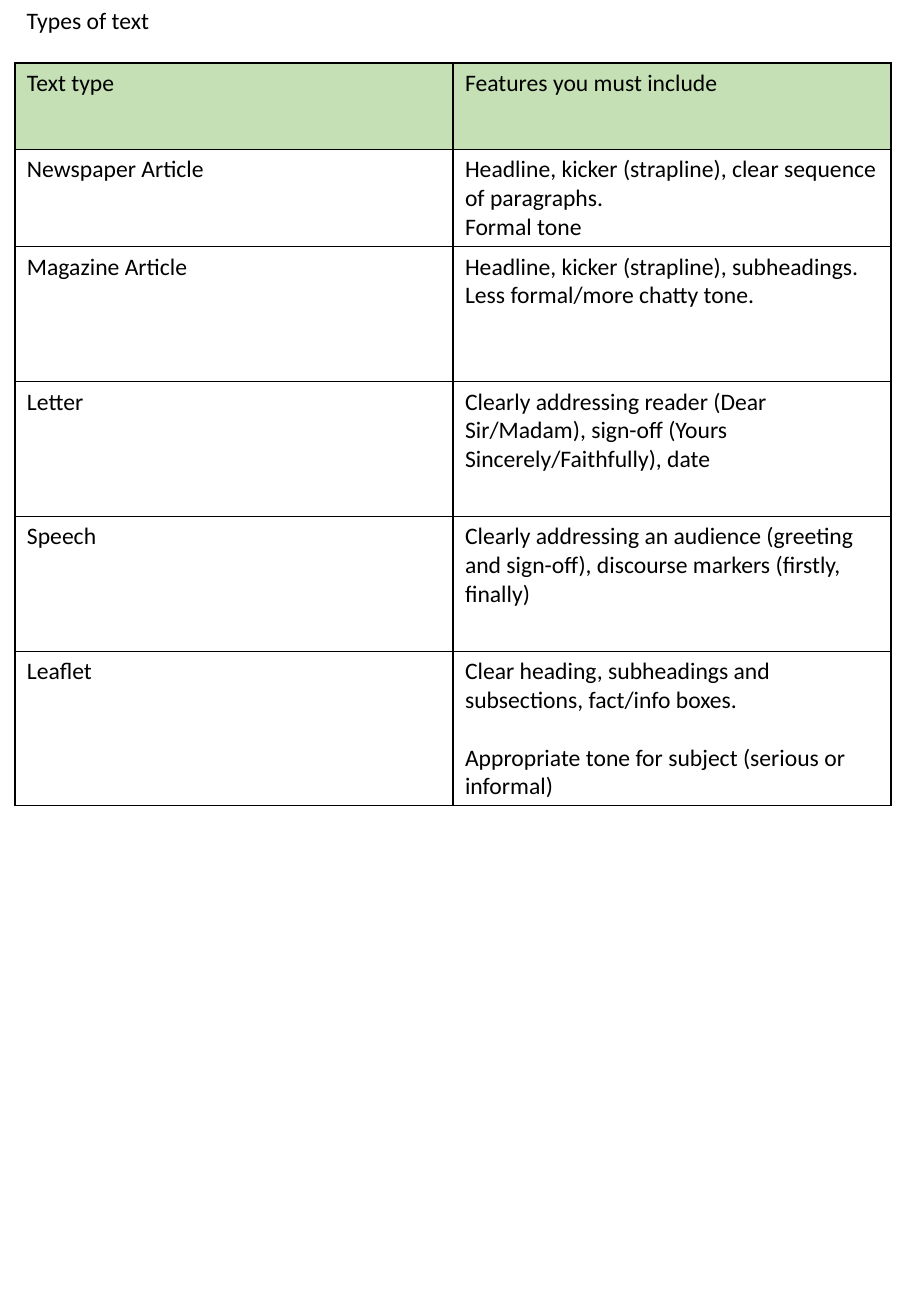
from lxml.etree import SubElement
from pptx import Presentation
from pptx.dml.color import RGBColor
from pptx.enum.text import MSO_AUTO_SIZE
from pptx.oxml.ns import qn
from pptx.util import Cm, Pt

BLACK = "000000"
GREEN = "C5E0B4"
HEADINGS = ("Text type", ["Features you must include"])
TEXT_TYPES = [
    ("Newspaper Article", ["Headline, kicker (strapline), clear sequence of paragraphs.", "Formal tone"]),
    ("Magazine Article", ["Headline, kicker (strapline), subheadings.", "Less formal/more chatty tone."]),
    ("Letter", ["Clearly addressing reader (Dear Sir/Madam), sign-off (Yours Sincerely/Faithfully), date"]),
    ("Speech", ["Clearly addressing an audience (greeting and sign-off), discourse markers (firstly, finally)"]),
    ("Leaflet", ["Clear heading, subheadings and subsections, fact/info boxes.",
                 "Appropriate tone for subject (serious or informal)"]),
]
ROW_HEIGHTS = [1.8, 1.96] + [2.82] * 4


def color(value):
    """Turn a hex string into a colour."""
    return RGBColor.from_string(value)


def write(frame, lines, size=14, font="Calibri", ink=BLACK, gap=0):
    """Write one paragraph per line, with a gap in points between them."""
    for index, line in enumerate(lines):
        para = frame.add_paragraph() if index else frame.paragraphs[0]
        if index and gap:
            para.space_before = Pt(gap)
        span = para.add_run()
        span.text = line
        span.font.size = Pt(size)
        span.font.name = font
        span.font.color.rgb = color(ink)


def add_borders(cell, ink=BLACK, width=1):
    """Draw a solid line on all four sides of a cell."""
    properties = cell._tc.get_or_add_tcPr()
    for side in ("lnL", "lnR", "lnT", "lnB"):
        line = SubElement(properties, qn(f"a:{side}"), w=str(Pt(width)))
        fill = SubElement(line, qn("a:solidFill"))
        SubElement(fill, qn("a:srgbClr"), val=ink)


def add_title(page, left, top, width, height):
    """Place the page title."""
    box = page.shapes.add_textbox(left, top, width, height)
    box.text_frame.word_wrap = True
    box.text_frame.auto_size = MSO_AUTO_SIZE.SHAPE_TO_FIT_TEXT
    write(box.text_frame, ["Types of text"])


def add_features_table(page, left, top, width, height):
    """Place the table of text types and their features."""
    rows = [HEADINGS] + TEXT_TYPES
    table = page.shapes.add_table(len(rows), 2, left, top, width, height).table
    table.first_row = False
    table.horz_banding = False
    for row, row_height in zip(table.rows, ROW_HEIGHTS):
        row.height = Cm(row_height)
    for index, (name, features) in enumerate(rows):
        gap = 17 if name == "Leaflet" else 0
        for column, lines in enumerate(([name], features)):
            cell = table.cell(index, column)
            add_borders(cell)
            if index == 0:
                cell.fill.solid()
                cell.fill.fore_color.rgb = color(GREEN)
            else:
                cell.fill.background()
            write(cell.text_frame, lines, gap=gap)


def main():
    """Build and save the deck."""
    deck = Presentation()
    deck.slide_width = Cm(19.05)
    deck.slide_height = Cm(27.51)
    page = deck.slides.add_slide(deck.slide_layouts[6])
    add_title(page, Cm(0.31), Cm(0), Cm(17.73), Cm(0.86))
    add_features_table(page, Cm(0.31), Cm(1.32), Cm(18.32), Cm(sum(ROW_HEIGHTS)))
    deck.save("out.pptx")


if __name__ == "__main__":
    main()
